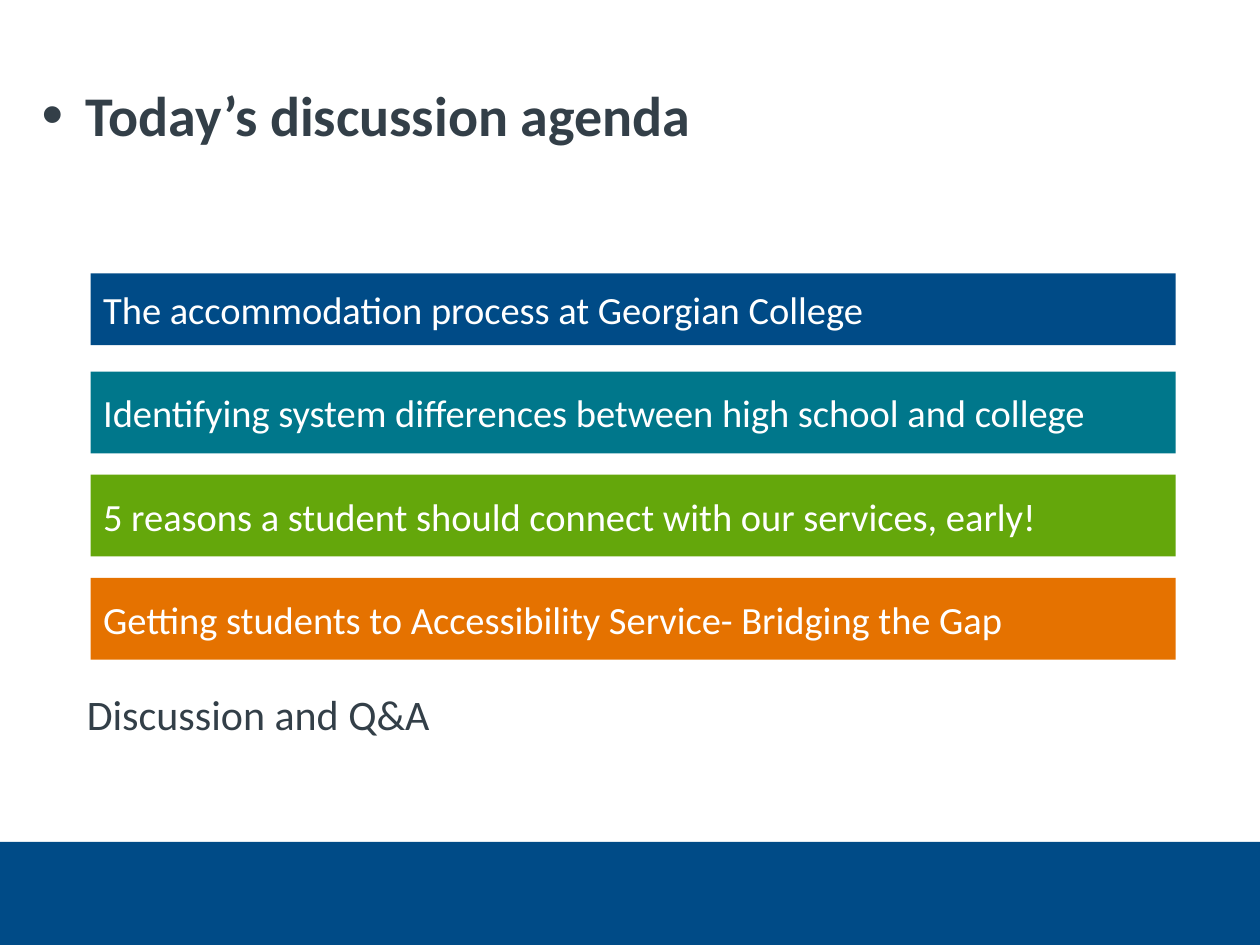
from pptx import Presentation
from pptx.dml.color import RGBColor as RGB
from pptx.enum.shapes import MSO_SHAPE as Kind
from pptx.enum.text import MSO_ANCHOR as Anchor, PP_ALIGN as Align
from pptx.oxml.ns import qn
from pptx.util import Cm, Pt
from lxml.etree import SubElement

HUES = {
    "blue": "004B87",
    "teal": "00778B",
    "green": "64A70B",
    "orange": "E57200",
    "slate": "333F48",
    "white": "FFFFFF",
}
FONT = "Calibri"
LEFT, WIDE = 1.83, 21.87  # agenda bars, cm
TOP, STEP, HIGH = 7.49, 2.08, 1.65  # bars after the first, cm

ITEMS = [
    ("Identifying system differences between high school and college", "teal"),
    ("5 reasons a student should connect with our services, early!", "green"),
    ("Getting students to Accessibility Service- Bridging the Gap", "orange"),
]


def hue(name):
    return RGB.from_string(HUES[name])


def set_frame(shape, pad, anchor):
    frame = shape.text_frame
    frame.word_wrap = True
    frame.vertical_anchor = anchor
    frame.margin_left = frame.margin_right = Cm(pad)
    frame.margin_top = frame.margin_bottom = Cm(pad)
    para = frame.paragraphs[0]
    para.alignment = Align.LEFT
    return para


def add_run(para, text, size, color, bold=False):
    run = para.add_run()
    run.text = text
    font = run.font
    font.name, font.size, font.bold = FONT, Pt(size), bold
    font.color.rgb = hue(color)


def add_bullet(para, hang):
    props = para._p.get_or_add_pPr()
    props.set("marL", str(Cm(hang)))
    props.set("indent", str(-Cm(hang)))
    SubElement(props, qn("a:buSzPct"), val="110000")
    SubElement(props, qn("a:buFont"), typeface="Arial")
    SubElement(props, qn("a:buChar"), char="•")


def add_rect(slide, left, top, wide, high, color):
    rect = slide.shapes.add_shape(
        Kind.RECTANGLE, Cm(left), Cm(top), Cm(wide), Cm(high))
    rect.shadow.inherit = False
    rect.fill.solid()
    rect.fill.fore_color.rgb = hue(color)
    rect.line.fill.background()
    return rect


def add_bar(slide, top, high, text, color):
    bar = add_rect(slide, LEFT, top, WIDE, high, color)
    para = set_frame(bar, 0.25, Anchor.MIDDLE)
    add_run(para, text, 22, "white")


def add_text(slide, left, top, wide, high):
    box = slide.shapes.add_textbox(Cm(left), Cm(top), Cm(wide), Cm(high))
    return set_frame(box, 0, Anchor.TOP)


def main():
    deck = Presentation()
    deck.slide_width, deck.slide_height = Cm(25.4), Cm(19.05)
    slide = deck.slides.add_slide(deck.slide_layouts[6])

    # Footer band
    add_rect(slide, 0, 16.97, 25.4, 2.08, "blue")

    # Title
    title = add_text(slide, 0.84, 1.63, 22.83, 3.18)
    add_bullet(title, 0.89)
    add_run(title, "Today’s discussion agenda", 32, "slate", bold=True)

    # Agenda bars: a slimmer first one, then an even stack
    add_bar(slide, 5.51, 1.45,
            "The accommodation process at Georgian College", "blue")
    for row, (text, color) in enumerate(ITEMS):
        add_bar(slide, TOP + row * STEP, HIGH, text, color)

    # Closing line
    close = add_text(slide, 1.75, 13.87, WIDE, 1.45)
    add_run(close, "Discussion and Q&A", 24, "slate")

    deck.save("out.pptx")


if __name__ == "__main__":
    main()
